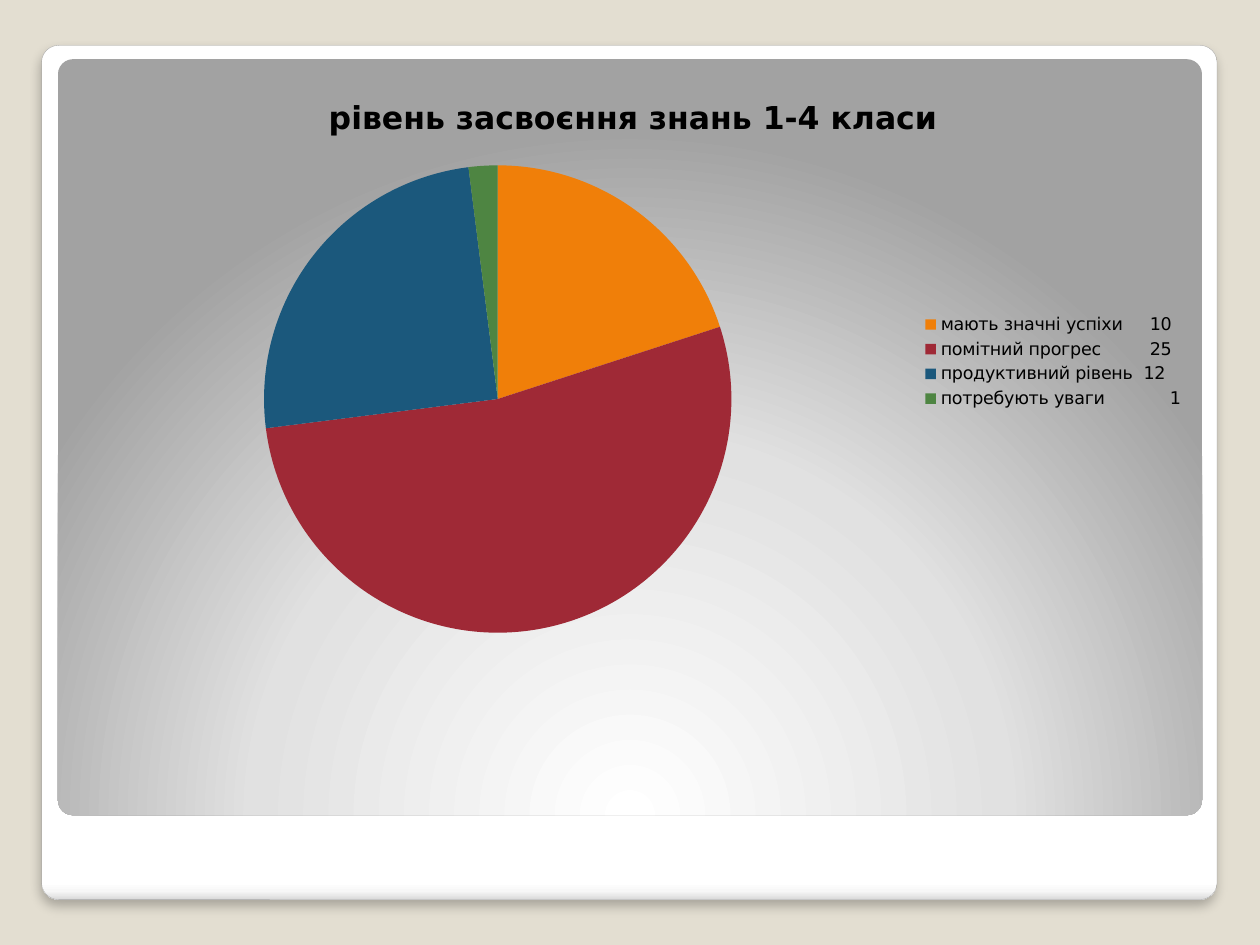
from lxml.etree import SubElement
from pptx import Presentation
from pptx.chart.data import CategoryChartData
from pptx.dml.color import RGBColor
from pptx.enum.chart import XL_CHART_TYPE, XL_LEGEND_POSITION
from pptx.enum.shapes import MSO_SHAPE
from pptx.oxml import parse_xml
from pptx.oxml.ns import nsdecls, qn
from pptx.util import Inches, Pt

TITLE = "рівень засвоєння знань 1-4 класи"
BACKGROUND = RGBColor(0xE3, 0xDE, 0xD1)
CARD_EDGE = RGBColor(0xA4, 0xA4, 0xA4)
BLACK = RGBColor(0, 0, 0)
# legend text, share, slice colour
LEVELS = [
    ("мають значні успіхи     10", 20, RGBColor(0xF0, 0x7F, 0x09)),
    ("помітний прогрес         25", 53, RGBColor(0x9F, 0x29, 0x36)),
    ("продуктивний рівень  12", 25, RGBColor(0x1B, 0x58, 0x7C)),
    ("потребують уваги            1", 2, RGBColor(0x4E, 0x85, 0x42)),
]
CARD_STOPS = [(0, "FFFFFF"), (98, "FFFFFF"), (99, "F7F7F7"), (100, "DADADA")]
PANEL_STOPS = [(0, "FFFFFF"), (55, "E1E1E1"), (100, "A2A2A2")]
DOWNWARD = '<a:lin ang="5400000" scaled="0"/>'
FROM_BELOW = ('<a:path path="circle"><a:fillToRect l="50000" t="175000" '
              'r="50000" b="-75000"/></a:path>')
CARD_BOX = (0.33, 0.36, 9.33, 6.78)
PANEL_BOX = (0.46, 0.47, 9.08, 6)
CHART_BOX = (0.55, 0.58, 8.95, 4.58)
PIE_LAYOUT = {"xMode": "edge", "yMode": "edge", "x": 0.17, "y": 0.16, "w": 0.42, "h": 0.81}


def add_rounded_panel(slide, box, stops, direction):
    panel = slide.shapes.add_shape(MSO_SHAPE.ROUNDED_RECTANGLE, *map(Inches, box))
    panel.adjustments[0] = 0.02
    panel.shadow.inherit = False
    panel.line.fill.background()
    stop_list = "".join(
        f'<a:gs pos="{percent * 1000}"><a:srgbClr val="{colour}"/></a:gs>'
        for percent, colour in stops)
    gradient = parse_xml(f'<a:gradFill {nsdecls("a")} rotWithShape="1">'
                         f'<a:gsLst>{stop_list}</a:gsLst>{direction}</a:gradFill>')
    panel._element.spPr.find(qn("a:prstGeom")).addnext(gradient)
    return panel


def add_drop_shadow(panel):
    effects = panel._element.spPr.find(qn("a:effectLst"))
    effects.append(parse_xml(
        f'<a:outerShdw {nsdecls("a")} blurRad="{Pt(6)}" dist="{Pt(4)}" dir="5400000" '
        'algn="t" rotWithShape="0"><a:srgbClr val="000000">'
        '<a:alpha val="25000"/></a:srgbClr></a:outerShdw>'))


def set_font(font, **values):
    font.color.rgb = BLACK
    for name, value in {"name": "DejaVu Sans", **values}.items():
        setattr(font, name, value)


def place_pie(chart):
    plot_area = chart._chartSpace.chart.plotArea
    layout = plot_area.find(qn("c:layout"))
    if layout is None:
        layout = parse_xml(f'<c:layout {nsdecls("c")}/>')
        plot_area.insert(0, layout)
    manual = SubElement(layout, qn("c:manualLayout"))
    for tag, value in {"layoutTarget": "inner", **PIE_LAYOUT}.items():
        SubElement(manual, qn(f"c:{tag}")).set("val", str(value))


def add_level_chart(slide):
    levels = CategoryChartData()
    levels.categories = [label for label, _, _ in LEVELS]
    levels.add_series(TITLE, [share for _, share, _ in LEVELS])
    chart = slide.shapes.add_chart(
        XL_CHART_TYPE.PIE, *map(Inches, CHART_BOX), levels).chart
    set_font(chart.font, size=Pt(10))

    chart.has_title = True
    heading = chart.chart_title.text_frame
    heading.text = TITLE
    set_font(heading.paragraphs[0].runs[0].font, size=Pt(18), bold=True)

    chart.has_legend = True
    chart.legend.position = XL_LEGEND_POSITION.RIGHT
    chart.legend.include_in_layout = False
    set_font(chart.legend.font, size=Pt(10))

    pie = chart.plots[0]
    pie.vary_by_categories = True
    for index, (_, _, colour) in enumerate(LEVELS):
        wedge = pie.series[0].points[index].format
        wedge.fill.solid()
        wedge.fill.fore_color.rgb = colour
        wedge.line.fill.background()
    place_pie(chart)


def main():
    presentation = Presentation()
    presentation.slide_width, presentation.slide_height = Inches(10), Inches(7.5)
    slide = presentation.slides.add_slide(presentation.slide_layouts[6])
    slide.background.fill.solid()
    slide.background.fill.fore_color.rgb = BACKGROUND

    card = add_rounded_panel(slide, CARD_BOX, CARD_STOPS, DOWNWARD)
    card.line.color.rgb = CARD_EDGE
    card.line.width = Pt(0.16)
    add_drop_shadow(card)
    add_rounded_panel(slide, PANEL_BOX, PANEL_STOPS, FROM_BELOW)
    add_level_chart(slide)
    presentation.save("out.pptx")


if __name__ == "__main__":
    main()
